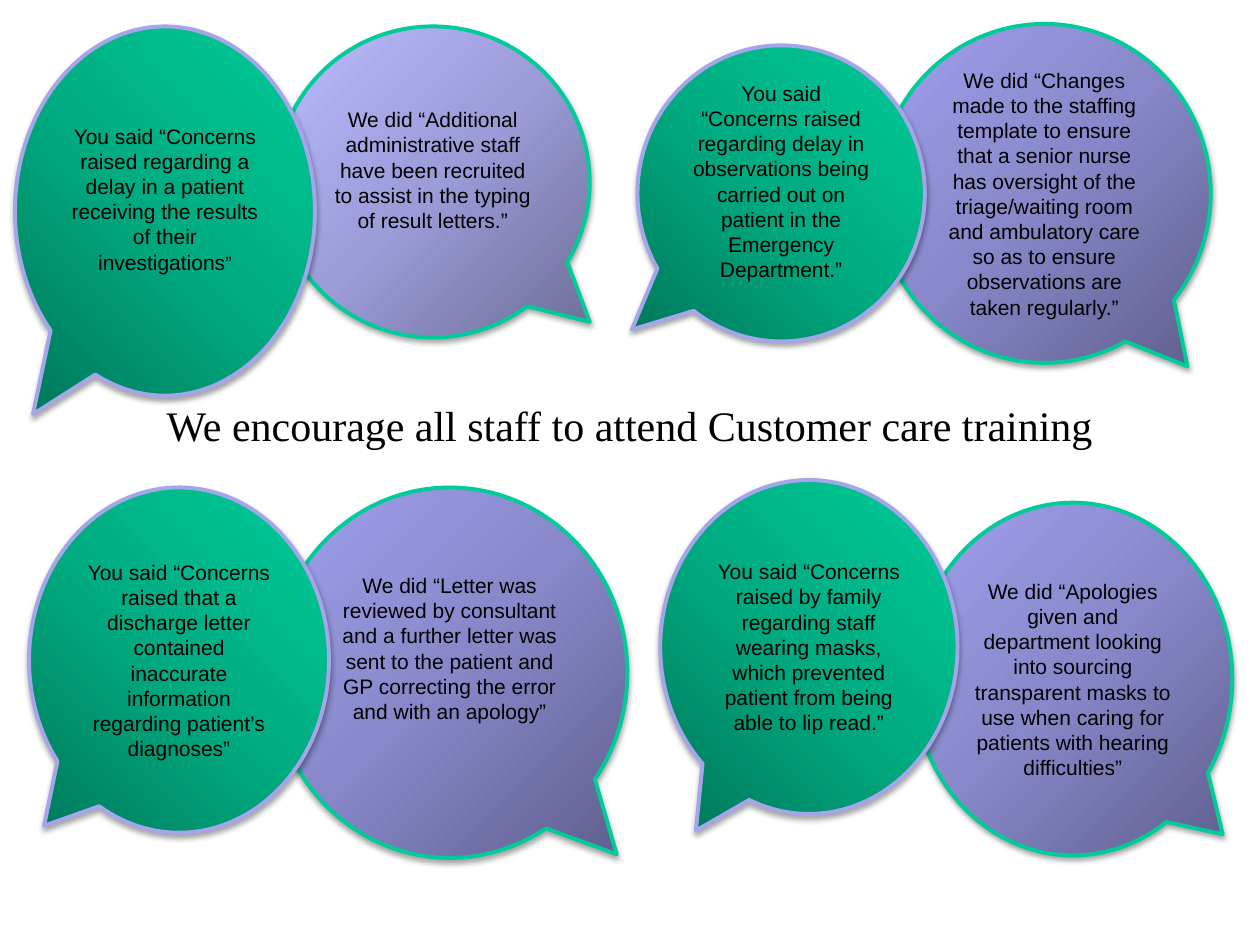
from pptx import Presentation
from pptx.dml.color import RGBColor as RGB
from pptx.enum.shapes import MSO_SHAPE as Shape
from pptx.enum.text import MSO_ANCHOR as Anchor, PP_ALIGN as Align
from pptx.oxml import parse_xml
from pptx.oxml.ns import nsdecls
from pptx.util import Pt

THEME = {
    "text": "000000",
    "title_font": "Times New Roman", "title_size": 24,
    "body_font": "Arial", "body_size": 12, "quote_size": 11,
    "line_width": 2.25, "inset": 3.6, "blank_line": 14,
    "said": {"line": "A5A5E9", "stops": ("00795B", "00AC81", "00CC99"), "focus": "left"},
    "did": {"line": "00CC99", "stops": ("5F5F8D", "8787C9", "A0A0EE"), "focus": "right"},
    "did_light": {"line": "00CC99", "stops": ("6E6E98", "9C9CD9", "BBBBFF"), "focus": "right"},
}
FOCUS = {"left": 'l="0" t="100000" r="100000" b="0"',
         "right": 'l="100000" t="100000" r="0" b="0"'}

HEADLINE = "We encourage all staff to attend Customer care training"
HEADLINE_BOX = (54, 224.6, 630 - 18, 36)

BUBBLES = [
    {"look": "did", "box": (522, 287.3, 182.2, 201.6), "tail": (0.47, 0.44), "lift": 0,
     "words": ["We did “Apologies given and department looking into sourcing transparent masks "
               "to use when caring for patients with hearing difficulties”"]},
    {"look": "did", "box": (155.5, 278.6, 203, 211.7), "tail": (0.47, 0.49), "lift": 2,
     "words": ["We did “Letter was reviewed by consultant and a further letter was sent to the "
               "patient and GP correcting the error and with an apology”"]},
    {"look": "said", "box": (16.6, 278.6, 171.4, 197.3), "tail": (-0.45, 0.48), "lift": 0,
     "words": ["You said “Concerns raised that a discharge letter contained inaccurate "
               "information regarding patient’s diagnoses”"]},
    {"look": "did_light", "box": (157.7, 15.1, 179.3, 177.8), "tail": (0.5, 0.45), "lift": 1,
     "words": ["We did “Additional administrative staff have been recruited to assist in the "
               "typing of result letters.”"]},
    {"look": "did", "box": (501.8, 13.7, 190.1, 193.7), "tail": (0.43, 0.51), "lift": 0,
     "words": ["We did “Changes made to the staffing template to ensure that a senior nurse has "
               "oversight of the triage/waiting room and ambulatory care so as to ensure "
               "observations are taken regularly.”"]},
    {"look": "said", "box": (377.3, 274.3, 169.9, 190.8), "tail": (-0.38, 0.55), "lift": 0,
     "words": ["You said “Concerns raised by family regarding staff wearing masks, which "
               "prevented patient from being able to lip read.”"]},
    {"look": "said", "box": (364.3, 25.9, 164.2, 169.2), "tail": (-0.52, 0.46), "lift": 1,
     "words": ["You said “Concerns raised regarding delay in observations being carried out on "
               "patient in the Emergency Department.”"]},
    {"look": "said", "box": (8.6, 15.1, 171.4, 211), "tail": (-0.44, 0.55), "lift": 1,
     "words": ["You said “Concerns raised regarding a delay in a patient receiving the results "
               "of their investigations", "”"]},
]


def apply(target, values):
    for key, value in values.items():
        setattr(target, key, value)


def write(paragraph, text, font, size):
    paragraph.alignment = Align.CENTER
    run = paragraph.add_run()
    run.text = text
    apply(run.font, {"name": font, "size": Pt(size)})
    run.font.color.rgb = RGB.from_string(THEME["text"])


def add_gradient(properties, look):
    stops = "".join(
        f'<a:gs pos="{index * 50000}"><a:srgbClr val="{colour}"/></a:gs>'
        for index, colour in enumerate(look["stops"]))
    properties.insert(2, parse_xml(
        f'<a:gradFill {nsdecls("a")} rotWithShape="1"><a:gsLst>{stops}</a:gsLst>'
        f'<a:path path="circle"><a:fillToRect {FOCUS[look["focus"]]}/></a:path></a:gradFill>'))


def add_shadow(bubble):
    bubble.shadow.inherit = False
    effects = bubble._element.spPr.find("{*}effectLst")
    effects.append(parse_xml(
        f'<a:outerShdw {nsdecls("a")} blurRad="{Pt(3.1)}" dist="{Pt(1.8)}" dir="5400000" '
        'rotWithShape="0"><a:srgbClr val="000000"><a:alpha val="35000"/></a:srgbClr>'
        '</a:outerShdw>'))


def add_bubble(slide, look, box, tail, lift, words):
    look = THEME[look]
    bubble = slide.shapes.add_shape(Shape.OVAL_CALLOUT, *map(Pt, box))
    for index, offset in enumerate(tail):
        bubble.adjustments[index] = offset
    add_gradient(bubble._element.spPr, look)
    bubble.line.color.rgb = RGB.from_string(look["line"])
    bubble.line.width = Pt(THEME["line_width"])
    add_shadow(bubble)
    frame = bubble.text_frame
    apply(frame, {"word_wrap": True, "vertical_anchor": Anchor.MIDDLE,
                  "margin_bottom": Pt(THEME["inset"] + lift * THEME["blank_line"])})
    for text, size in zip(words, (THEME["body_size"], THEME["quote_size"])):
        write(frame.paragraphs[0], text, THEME["body_font"], size)


def add_headline(slide):
    frame = slide.shapes.add_textbox(*map(Pt, HEADLINE_BOX)).text_frame
    frame.word_wrap = True
    write(frame.paragraphs[0], HEADLINE, THEME["title_font"], THEME["title_size"])


def main():
    deck = Presentation()
    apply(deck, {"slide_width": Pt(720), "slide_height": Pt(540)})
    slide = deck.slides.add_slide(deck.slide_layouts[6])
    add_headline(slide)
    for bubble in BUBBLES:
        add_bubble(slide, **bubble)
    deck.save("out.pptx")


if __name__ == "__main__":
    main()
